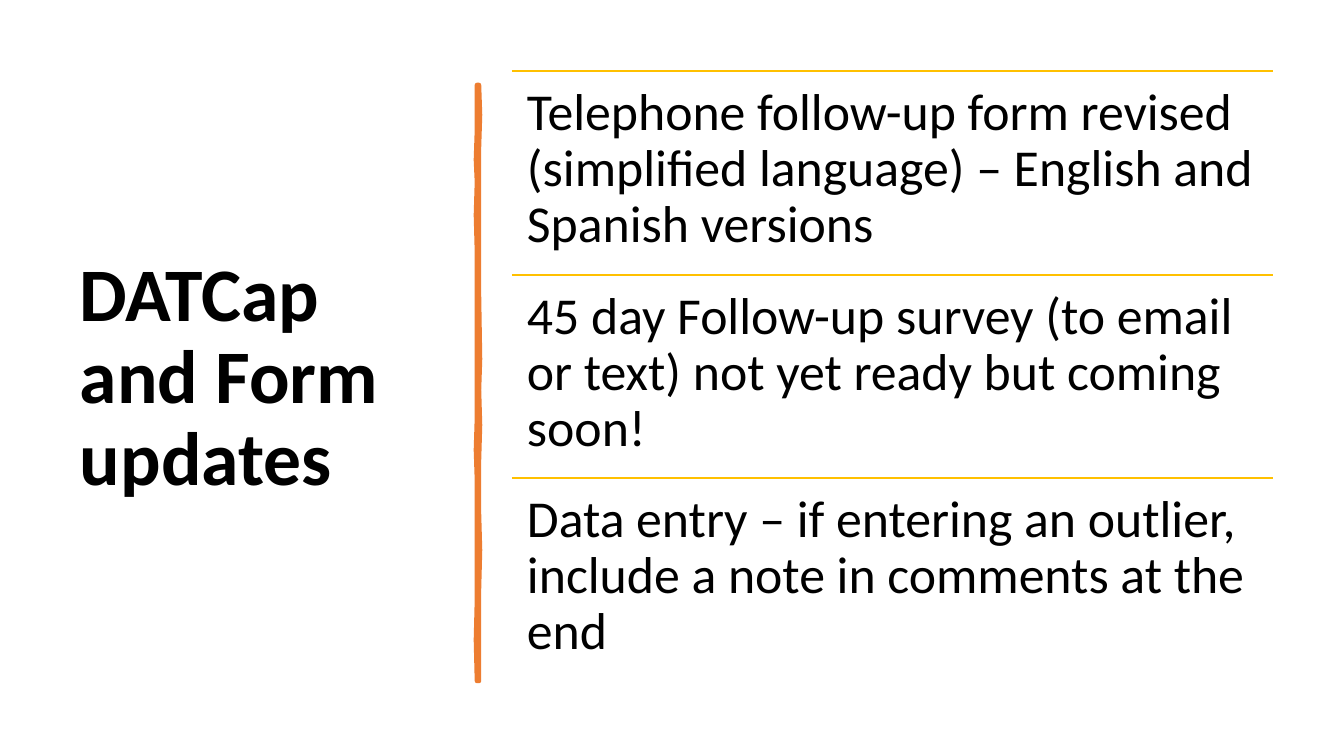
import pptx
import pptx.util
import pptx.dml.color
import pptx.enum.shapes
import pptx.enum.text
import pptx.oxml.ns
import lxml.etree

TITLE = "DATCap and Form updates"
UPDATES = [
    "Telephone follow-up form revised (simplified language) – English and Spanish versions",
    "45 day Follow-up survey (to email or text) not yet ready but coming soon!",
    "Data entry – if entering an outlier, include a note in comments at the end",
]
BLACK = pptx.dml.color.RGBColor(0x00, 0x00, 0x00)
ORANGE = pptx.dml.color.RGBColor(0xED, 0x7D, 0x31)
GOLD = pptx.dml.color.RGBColor(0xFF, 0xC0, 0x00)

TITLE_BOX = (70, 71, 377, 616)
LIST_LEFT, LIST_TOP, LIST_WIDTH, LIST_HEIGHT = 512, 71, 761, 611
BAR_RIGHT = [(479, 85), (480, 115), (479, 147), (479, 296), (480, 359), (479, 390),
             (480, 425), (479, 460), (479, 514), (480, 550), (479, 589), (479, 681)]
BAR_LEFT = [(477, 681), (476, 640), (477, 600), (477, 480), (476, 450), (477, 418),
            (477, 252), (476, 215), (477, 182), (476, 160), (477, 130), (477, 85)]
PX = 914400 / 100.8


def emu(px):
    return pptx.util.Emu(round(px * PX))


def add_text(slide, text, box, size, bold=False, inset=(10, 5),
             anchor=pptx.enum.text.MSO_ANCHOR.TOP):
    tf = slide.shapes.add_textbox(*map(emu, box)).text_frame
    tf.word_wrap = True
    tf.vertical_anchor = anchor
    tf.margin_left = tf.margin_right = emu(inset[0])
    tf.margin_top = tf.margin_bottom = emu(inset[1])
    p = tf.paragraphs[0]
    p.line_spacing = 0.9
    r = p.add_run()
    r.text = text
    r.font.name = "Calibri"
    r.font.size = pptx.util.Pt(size)
    r.font.bold = bold
    r.font.color.rgb = BLACK


def add_rule(slide, left, top, width):
    line = slide.shapes.add_connector(pptx.enum.shapes.MSO_CONNECTOR.STRAIGHT,
                                      emu(left), emu(top), emu(left + width), emu(top))
    line.line.color.rgb = GOLD
    line.line.width = pptx.util.Pt(1)
    lxml.etree.SubElement(line._element.spPr, pptx.oxml.ns.qn("a:effectLst"))


def add_bar(slide):
    outline = BAR_RIGHT + BAR_LEFT
    builder = slide.shapes.build_freeform(*outline[0], scale=PX)
    builder.add_line_segments(outline[1:], close=True)
    sp = builder.convert_to_shape()
    sp.shadow.inherit = False
    sp.fill.solid()
    sp.fill.fore_color.rgb = ORANGE
    sp.line.color.rgb = ORANGE
    sp.line.width = pptx.util.Pt(3.25)
    lxml.etree.SubElement(sp.line._get_or_add_ln(), pptx.oxml.ns.qn("a:round"))


def main():
    prs = pptx.Presentation()
    prs.slide_width, prs.slide_height = emu(1344), emu(756)
    slide = prs.slides.add_slide(prs.slide_layouts[6])
    add_text(slide, TITLE, TITLE_BOX, 54, bold=True,
             anchor=pptx.enum.text.MSO_ANCHOR.MIDDLE)
    add_bar(slide)
    row_height = LIST_HEIGHT / len(UPDATES)
    for i, update in enumerate(UPDATES):
        top = LIST_TOP + round(i * row_height)
        add_rule(slide, LIST_LEFT, top, LIST_WIDTH)
        add_text(slide, update, (LIST_LEFT, top, LIST_WIDTH, row_height), 37,
                 inset=(15, 15))
    prs.save("out.pptx")


if __name__ == "__main__":
    main()
